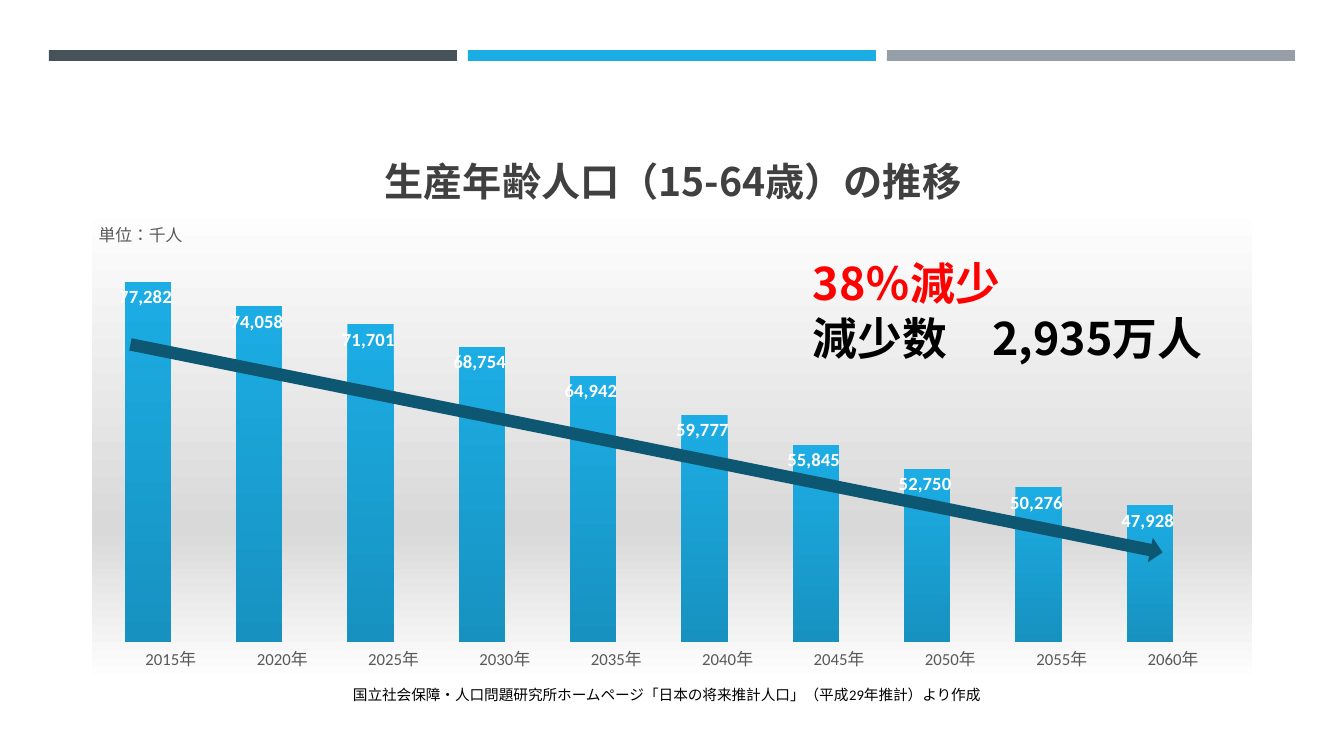
from lxml import etree
from pptx import Presentation, util as u
from pptx.chart.data import CategoryChartData
from pptx.dml.color import RGBColor
from pptx.enum import chart as charts, shapes, text
from pptx.oxml import parse_xml
from pptx.oxml.ns import nsdecls, qn

PX = 9071  # EMU per pixel at 100.8 pixels to the inch
CJK = "Noto Sans CJK JP"


def rgb(value):
    return RGBColor.from_string(value)


def style(font, east_asian=None, color="000000", **values):
    """Apply format values, a colour and an East Asian typeface to a font."""
    for key, value in values.items():
        setattr(font, key, value)
    font.color.rgb = rgb(color)
    if east_asian:
        etree.SubElement(font._element, qn("a:ea")).set("typeface", east_asian)


deck = Presentation()
deck.slide_width, deck.slide_height = u.Inches(13.333), u.Inches(7.5)
page = deck.slides.add_slide(deck.slide_layouts[6])

# Three bars along the top
for column, color in enumerate(["465359", "1CADE4", "969FA7"]):
    bar = page.shapes.add_shape(shapes.MSO_SHAPE.RECTANGLE, (49 + 419 * column) * PX,
                                50 * PX, 408 * PX, 11 * PX)
    bar.shadow.inherit = False
    bar.fill.solid()
    bar.fill.fore_color.rgb = rgb(color)
    bar.line.fill.background()

# Population chart; the second series leaves room beside each bar
data = CategoryChartData()
data.categories = [f"{year}年" for year in range(2015, 2061, 5)]
data.add_series("Series 1", [77282, 74058, 71701, 68754, 64942,
                             59777, 55845, 52750, 50276, 47928], "#,##0_ ")
data.add_series("Series 2", [1])
chart = page.shapes.add_chart(charts.XL_CHART_TYPE.COLUMN_CLUSTERED, 92 * PX, 202 * PX,
                              1160 * PX, 480 * PX, data).chart
style(chart.font, name="Calibri", size=u.Pt(10))
chart.has_legend = False
chart.has_title = True
unit = chart.chart_title.text_frame.paragraphs[0].add_run()
unit.text = "単位：千人"
style(unit.font, CJK, "595959", name="Calibri", size=u.Pt(12), bold=False)

# Axes
values, years = chart.value_axis, chart.category_axis
values.minimum_scale, values.maximum_scale = 30000, 80000
values.has_major_gridlines = False
values.visible = False
years.major_tick_mark = charts.XL_TICK_MARK.NONE
years.format.line.fill.background()
style(years.tick_labels.font, CJK, "595959", name="Calibri", size=u.Pt(12))

# Columns and their labels
plot = chart.plots[0]
plot.gap_width, plot.overlap, plot.vary_by_categories = 41, 0, False
labels = plot.series[0].data_labels
for key, value in {"show_value": True, "number_format": "#,##0_ ",
                   "number_format_is_linked": False,
                   "position": charts.XL_LABEL_POSITION.INSIDE_END}.items():
    setattr(labels, key, value)
style(labels.font, color="FFFFFF", name="Calibri", size=u.Pt(13.3), bold=True)

# Vertical gradients of the columns and the chart background
background = parse_xml(f'<c:spPr {nsdecls("c", "a")}/>')
chart._chartSpace.find(qn("c:chart")).addnext(background)
gradients = [
    (plot.series[0]._element.get_or_add_spPr(), [(0, "1CADE4"), (100, "1792C0")]),
    (plot.series[1]._element.get_or_add_spPr(), [(0, "2683C6"), (100, "206EA6")]),
    (background, [(0, "FFFFFF"), (68, "D9D9D9"), (100, "FFFFFF")]),
]
for properties, stops in gradients:
    marks = "".join(f'<a:gs pos="{pos * 1000}"><a:srgbClr val="{color}"/></a:gs>'
                    for pos, color in stops)
    properties.append(parse_xml(f'<a:gradFill {nsdecls("a")}><a:gsLst>{marks}</a:gsLst>'
                                '<a:lin ang="5400000" scaled="0"/></a:gradFill>'))
    properties.append(parse_xml(f'<a:ln {nsdecls("a")}><a:noFill/></a:ln>'))

# Places of the plot and the unit, as fractions of the chart
plot_area = chart._chartSpace.find(".//" + qn("c:plotArea"))
title = chart.chart_title._element
layouts = [(plot_area, 0, {"x": 0.02, "y": 0.123, "w": 0.96, "h": 0.794}),
           (title, 1, {"x": 0.003, "y": 0.03})]
for parent, index, place in layouts:
    for old in parent.findall(qn("c:layout")):
        parent.remove(old)
    target = '<c:layoutTarget val="inner"/>' if "w" in place else ""
    modes = "".join(f'<c:{key}Mode val="edge"/>' for key in "xy")
    sizes = "".join(f'<c:{key} val="{value}"/>' for key, value in place.items())
    parent.insert(index, parse_xml(f'<c:layout {nsdecls("c")}><c:manualLayout>{target}{modes}'
                                   f'{sizes}</c:manualLayout></c:layout>'))

# Falling arrow
arrow = page.shapes.add_shape(shapes.MSO_SHAPE.RIGHT_ARROW, 120 * PX, 436 * PX,
                              1053 * PX, 25 * PX)
arrow.rotation = 11.4
arrow.shadow.inherit = False
arrow.fill.solid()
arrow.fill.fore_color.rgb = rgb("0E5772")
arrow.line.fill.background()

# Heading, key figures and source note
left, center = text.PP_ALIGN.LEFT, text.PP_ALIGN.CENTER
top, bottom = text.MSO_ANCHOR.TOP, text.MSO_ANCHOR.BOTTOM
texts = [
    ((65, 78, 1216, 131), bottom, center, True, CJK, 28, True, None,
     [("生産年齢人口（15-64歳）の推移", "404040")]),
    ((803, 250, 431, 119), top, left, True, CJK, 32, True, u.Pt(39),
     [("38％減少", "FF0000"), ("減少数　2,935万人", "000000")]),
    ((343, 681, 659, 28), top, left, False, "Calibri", 10.5, False, None,
     [("国立社会保障・人口問題研究所ホームページ「日本の将来推計人口」"
       "（平成29年推計）より作成", "000000")]),
]
for place, anchor, align, wrap, face, size, bold, spacing, lines in texts:
    frame = page.shapes.add_textbox(*[length * PX for length in place]).text_frame
    frame.word_wrap, frame.vertical_anchor = wrap, anchor
    for number, (words, color) in enumerate(lines):
        para = frame.add_paragraph() if number else frame.paragraphs[0]
        para.alignment, para.line_spacing = align, spacing
        span = para.add_run()
        span.text = words
        style(span.font, CJK, color, name=face, size=u.Pt(size), bold=bold)

deck.save("out.pptx")
